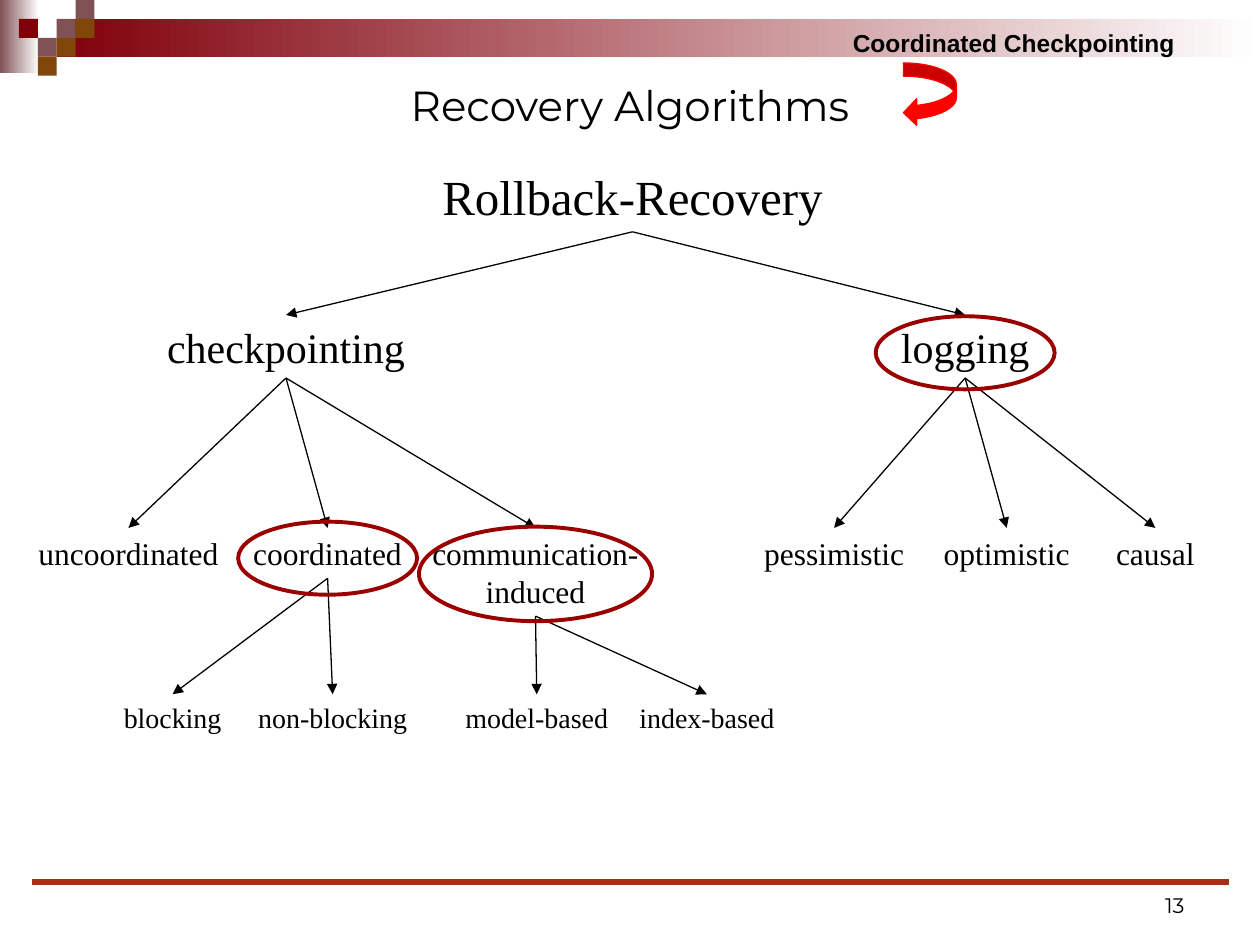
import pptx
import pptx.dml.color
import pptx.enum.shapes
import pptx.enum.text
import pptx.oxml
import pptx.oxml.ns
import pptx.util
from dataclasses import dataclass

Inches, Pt = pptx.util.Inches, pptx.util.Pt
SHAPE = pptx.enum.shapes.MSO_SHAPE
ALIGN = pptx.enum.text.PP_ALIGN
ANCHOR = pptx.enum.text.MSO_ANCHOR
FIT = pptx.enum.text.MSO_AUTO_SIZE

COLORS = {
    "text": "000000", "white": "FFFFFF", "mauve": "805255", "wine": "80000A",
    "brown": "81460A", "rule": "A13214", "ring": "9B0000", "arrow": "FF0000",
}


@dataclass
class Node:
    label: str
    center: float
    width: float
    children: tuple = ()
    ring: tuple = None  # width, height, offset from the node's top
    height: float = None
    wrap: bool = False


LEVELS = [  # top, height, font size
    (0, 0.57, 28), (1.23, 0.5, 24), (2.92, 0.4, 18), (4.24, 0.37, 16),
]
RECOVERY = Node("Rollback-Recovery", 4.82, 3.22, (
    Node("checkpointing", 2.07, 2.09, (
        Node("uncoordinated", 0.82, 1.63),
        Node("coordinated", 2.4, 1.38, (
            Node("blocking", 1.17, 0.98),
            Node("non-blocking", 2.44, 1.39),
        ), ring=(1.42, 0.58, -0.05)),
        Node("communication-induced", 4.05, 2, (
            Node("model-based", 4.06, 1.34),
            Node("index-based", 5.41, 1.28),
        ), ring=(1.85, 0.75, -0.01), height=0.7, wrap=True),
    )),
    Node("logging", 7.46, 1.22, (
        Node("pessimistic", 6.42, 1.31),
        Node("optimistic", 7.79, 1.2),
        Node("causal", 8.97, 0.83),
    ), ring=(1.42, 0.58, 0.01)),
))


def rgb(name):
    return pptx.dml.color.RGBColor.from_string(COLORS[name])


def add_shape(slide, kind, box, fill=None, line=None, weight=0.75):
    shape = slide.shapes.add_shape(kind, *map(Inches, box))
    shape.shadow.inherit = False
    if fill is None:
        shape.fill.background()
    else:
        shape.fill.solid()
        shape.fill.fore_color.rgb = rgb(fill)
    if line is None:
        shape.line.fill.background()
    else:
        shape.line.color.rgb = rgb(line)
        shape.line.width = Pt(weight)
    return shape


def add_fade(slide, box, start):
    """Rectangle fading from the start colour to white, left to right."""
    fill = add_shape(slide, SHAPE.RECTANGLE, box).fill
    fill.gradient()
    fill.gradient_angle = 0
    for stop, color, position in zip(fill.gradient_stops, (start, "white"), (0, 1)):
        stop.color.rgb = rgb(color)
        stop.position = position


def add_text(slide, box, text, font, size, align=ALIGN.CENTER,
             anchor=ANCHOR.TOP, wrap=True, bold=False, grow=False):
    label = slide.shapes.add_textbox(*map(Inches, box))
    frame = label.text_frame
    frame.word_wrap = wrap
    frame.auto_size = FIT.SHAPE_TO_FIT_TEXT if grow else FIT.NONE
    frame.vertical_anchor = anchor
    paragraph = frame.paragraphs[0]
    paragraph.text = text
    paragraph.alignment = align
    paragraph.font.name = font
    paragraph.font.size = Pt(size)
    paragraph.font.bold = bold
    paragraph.font.color.rgb = rgb("text")
    return label


def add_line(slide, start, end, color, weight):
    line = slide.shapes.add_connector(
        pptx.enum.shapes.MSO_CONNECTOR.STRAIGHT, *map(Inches, start + end))
    line.line.color.rgb = rgb(color)
    line.line.width = Pt(weight)
    pptx.oxml.ns.qn("a:effectLst")
    line._element.spPr.append(pptx.oxml.parse_xml(
        f'<a:effectLst {pptx.oxml.ns.nsdecls("a")}/>'))
    return line


def add_branch(slide, parent, child):
    """Arrow from the parent's bottom to the child's top."""
    branch = add_line(slide, (0, 0), (1, 1), "text", 0.75)
    branch.begin_connect(parent, 2)
    branch.end_connect(child, 0)
    branch.line._get_or_add_ln().append(pptx.oxml.parse_xml(
        f'<a:tailEnd {pptx.oxml.ns.nsdecls("a")} type="triangle"/>'))


def add_header(slide, box):
    left, top, width, height = box
    cell = 0.15
    add_fade(slide, (left, top, 0.31, height), "mauve")
    add_fade(slide, (left + 3 * cell, top + cell, width - 3 * cell, 2 * cell), "wine")
    mosaic = [(3, 1, "mauve"), (4, 0, "mauve"), (4, 1, "brown"), (2, 2, "mauve"),
              (1, 1, "wine"), (3, 2, "brown"), (2, 3, "brown")]
    for column, row, color in mosaic:
        add_shape(slide, SHAPE.RECTANGLE,
                  (left + column * cell, top + row * cell, cell, cell), color)
    add_text(slide, (left + 6.67, top + 0.17, 2.83, 0.33), "Coordinated Checkpointing",
             "Arial", 14, ALIGN.LEFT, bold=True, grow=True)


def add_title(slide, box):
    left, top, width, height = box
    add_text(slide, box, "Recovery Algorithms", "Montserrat", 24, anchor=ANCHOR.MIDDLE)
    add_shape(slide, SHAPE.CURVED_LEFT_ARROW, (left + 6.67, top, 0.42, 0.5),
              "arrow", "arrow")


def add_tree(slide, box, root):
    left, top = box[:2]
    branches, rings = [], []

    def place(node, level):
        offset, height, size = LEVELS[level]
        center, node_top = left + node.center, top + offset
        label = add_text(
            slide, (center - node.width / 2, node_top, node.width, node.height or height),
            node.label, "Times New Roman", size, wrap=node.wrap, grow=True)
        if node.ring:
            width, ring_height, shift = node.ring
            rings.append((center - width / 2, node_top + shift, width, ring_height))
        for child in node.children:
            branches.append((label, place(child, level + 1)))
        return label

    place(root, 0)
    for parent, child in branches:
        add_branch(slide, parent, child)
    for ring in rings:
        add_shape(slide, SHAPE.OVAL, ring, line="ring", weight=2.25)


def add_footer(slide, box):
    left, top, width, height = box
    rule = top + 0.17
    add_line(slide, (left, rule), (left + width, rule), "rule", 3)
    add_text(slide, (left + width - 2.58, top, 2.33, height), "13",
             "Montserrat", 12, ALIGN.RIGHT, ANCHOR.BOTTOM)


def main():
    deck = pptx.Presentation()
    deck.slide_width, deck.slide_height = Inches(10), Inches(7.5)
    slide = deck.slides.add_slide(deck.slide_layouts[6])
    add_header(slide, (0, 0, 10, 0.58))
    add_footer(slide, (0.25, 6.83, 9.5, 0.5))
    add_title(slide, (0.5, 0.5, 9, 0.67))
    add_tree(slide, (0.2, 1.27, 9.38, 4.61), RECOVERY)
    deck.save("out.pptx")


if __name__ == "__main__":
    main()
